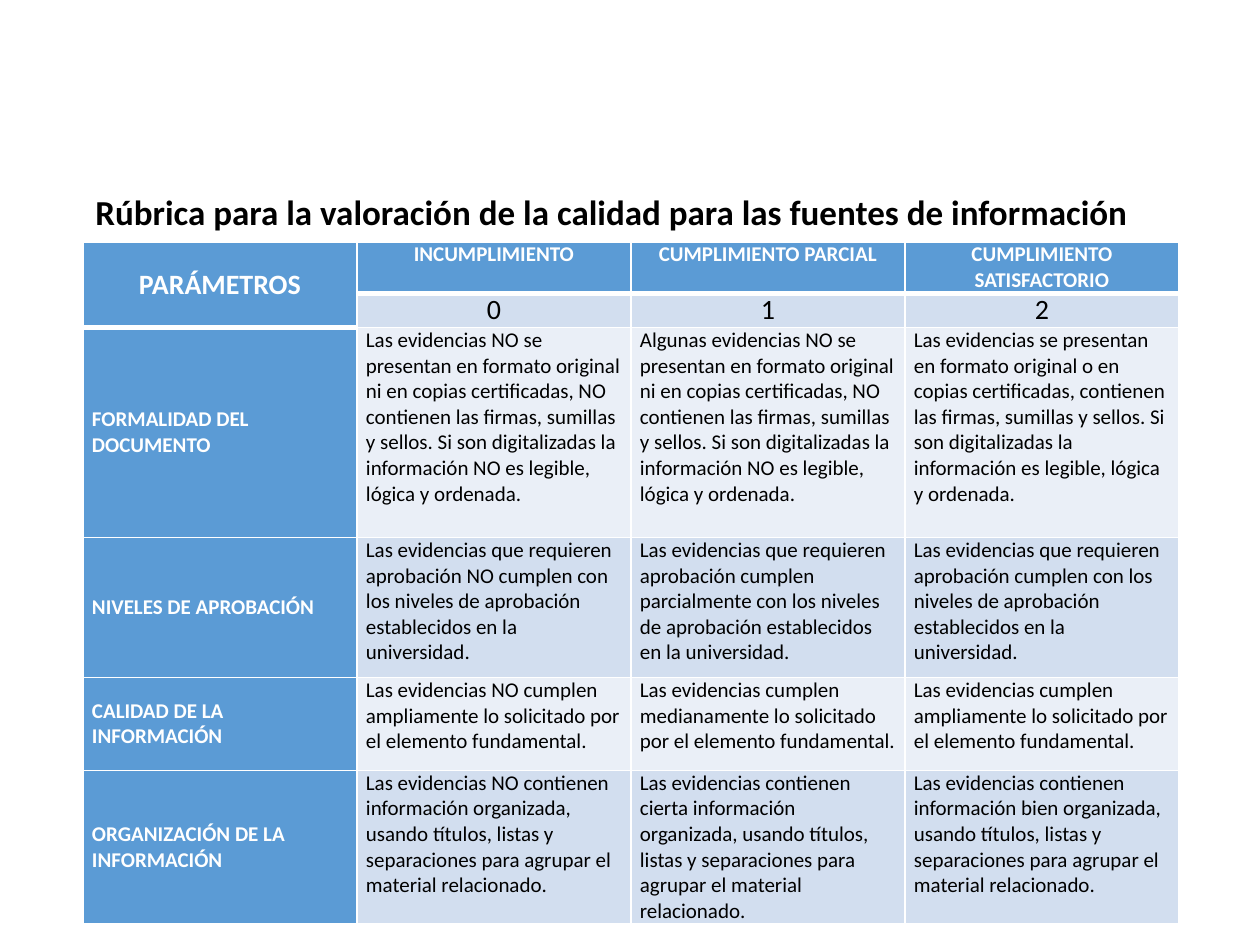
from lxml.etree import SubElement
from pptx import Presentation
from pptx.dml.color import RGBColor
from pptx.enum.text import MSO_ANCHOR, PP_ALIGN
from pptx.oxml.ns import qn
from pptx.util import Pt

PX = 914400 // 126
WHITE = RGBColor(0xFF, 0xFF, 0xFF)
BLACK = RGBColor(0, 0, 0)
BLUE = RGBColor(0x5B, 0x9B, 0xD5)
PALE = RGBColor(0xEA, 0xEF, 0xF7)
SOFT = RGBColor(0xD2, 0xDE, 0xEF)

TITLE = "Rúbrica para la valoración de la calidad para las fuentes de información"
COL = 274
ROWS = [47, 32, 210, 140, 93, 140]
CELLS = [
    ["PARÁMETROS", "INCUMPLIMIENTO", "CUMPLIMIENTO PARCIAL",
     "CUMPLIMIENTO SATISFACTORIO"],
    ["", "0", "1", "2"],
    ["FORMALIDAD DEL DOCUMENTO",
     "Las evidencias NO se presentan en formato original ni en copias certificadas, "
     "NO contienen las firmas, sumillas y sellos. Si son digitalizadas la información "
     "NO es legible, lógica y ordenada.",
     "Algunas evidencias NO se presentan en formato original ni en copias certificadas, "
     "NO contienen las firmas, sumillas y sellos. Si son digitalizadas la información "
     "NO es legible, lógica y ordenada.",
     "Las evidencias se presentan en formato original o en copias certificadas, "
     "contienen las firmas, sumillas y sellos. Si son digitalizadas la información "
     "es legible, lógica y ordenada."],
    ["NIVELES DE APROBACIÓN",
     "Las evidencias que requieren aprobación NO cumplen con los niveles de "
     "aprobación establecidos en la universidad.",
     "Las evidencias que requieren aprobación cumplen parcialmente con los niveles "
     "de aprobación establecidos en la universidad.",
     "Las evidencias que requieren aprobación cumplen con los niveles de "
     "aprobación establecidos en la universidad."],
    ["CALIDAD DE LA INFORMACIÓN",
     "Las evidencias NO cumplen ampliamente lo solicitado por el elemento fundamental.",
     "Las evidencias cumplen medianamente lo solicitado por el elemento fundamental.",
     "Las evidencias cumplen ampliamente lo solicitado por el elemento fundamental."],
    ["ORGANIZACIÓN DE LA INFORMACIÓN",
     "Las evidencias NO contienen información organizada, usando títulos, listas y "
     "separaciones para agrupar el material relacionado.",
     "Las evidencias contienen cierta información organizada, usando títulos, listas y "
     "separaciones para agrupar el material relacionado.",
     "Las evidencias contienen información bien organizada, usando títulos, listas y "
     "separaciones para agrupar el material relacionado."],
]


def set_all(item, form):
    for name, value in form.items():
        setattr(item, name, value)


def write(para, text, size, color, bold):
    run = para.add_run()
    run.text = text
    set_all(run.font, {"name": "Calibri", "size": Pt(size), "bold": bold})
    run.font.color.rgb = color


def add_edges(cell, edges):
    """Draw white cell borders; edges maps a side (L, R, T, B) to points."""
    props = cell._tc.get_or_add_tcPr()
    for side, width in edges.items():
        line = SubElement(props, qn(f"a:ln{side}"), w=str(Pt(width)))
        fill = SubElement(line, qn("a:solidFill"))
        SubElement(fill, qn("a:srgbClr"), val=str(WHITE))


def style_cell(cell, text, row, col):
    head = row == 0 or col == 0
    low = 3 if row == 0 or (row, col) == (1, 0) else 1
    # Each inner edge belongs to the cell above it.
    top = {"T": 1} if row == 0 else {}
    add_edges(cell, {"L": 1, "R": 1, **top, "B": low})
    cell.fill.solid()
    cell.fill.fore_color.rgb = BLUE if head else SOFT if row % 2 else PALE
    set_all(cell, {
        "margin_left": 9 * PX, "margin_right": 9 * PX,
        "margin_top": 0, "margin_bottom": 0,
        "vertical_anchor": MSO_ANCHOR.MIDDLE if col == 0 else MSO_ANCHOR.TOP,
    })
    if text:
        para = cell.text_frame.paragraphs[0]
        para.alignment = PP_ALIGN.CENTER if row < 2 else PP_ALIGN.LEFT
        large = row == 1 or row == col == 0
        write(para, text, 16 if large else 12, WHITE if head else BLACK, head)


def add_grid(slide, left, top):
    count = len(CELLS[0])
    frame = slide.shapes.add_table(len(ROWS), count, left * PX, top * PX,
                                   count * COL * PX, sum(ROWS) * PX)
    table = frame.table
    set_all(table, {"first_row": False, "horz_banding": False})
    for col in table.columns:
        col.width = COL * PX
    for row, height in zip(table.rows, ROWS):
        row.height = height * PX
    for r, texts in enumerate(CELLS):
        for c, text in enumerate(texts):
            style_cell(table.cell(r, c), text, r, c)
    table.cell(0, 0).merge(table.cell(1, 0))


def add_title(slide, left, top, width, height):
    box = slide.shapes.add_textbox(left * PX, top * PX, width * PX, height * PX)
    box.text_frame.word_wrap = True
    para = box.text_frame.paragraphs[0]
    set_all(para, {"alignment": PP_ALIGN.JUSTIFY, "line_spacing": 1.15,
                   "space_after": Pt(10)})
    write(para, TITLE, 20, BLACK, True)


def main():
    deck = Presentation()
    set_all(deck, {"slide_width": 1260 * PX, "slide_height": 945 * PX})
    slide = deck.slides.add_slide(deck.slide_layouts[6])
    add_grid(slide, 83, 242)
    add_title(slide, 83, 178, 1071, 62)
    deck.save("out.pptx")


if __name__ == "__main__":
    main()
